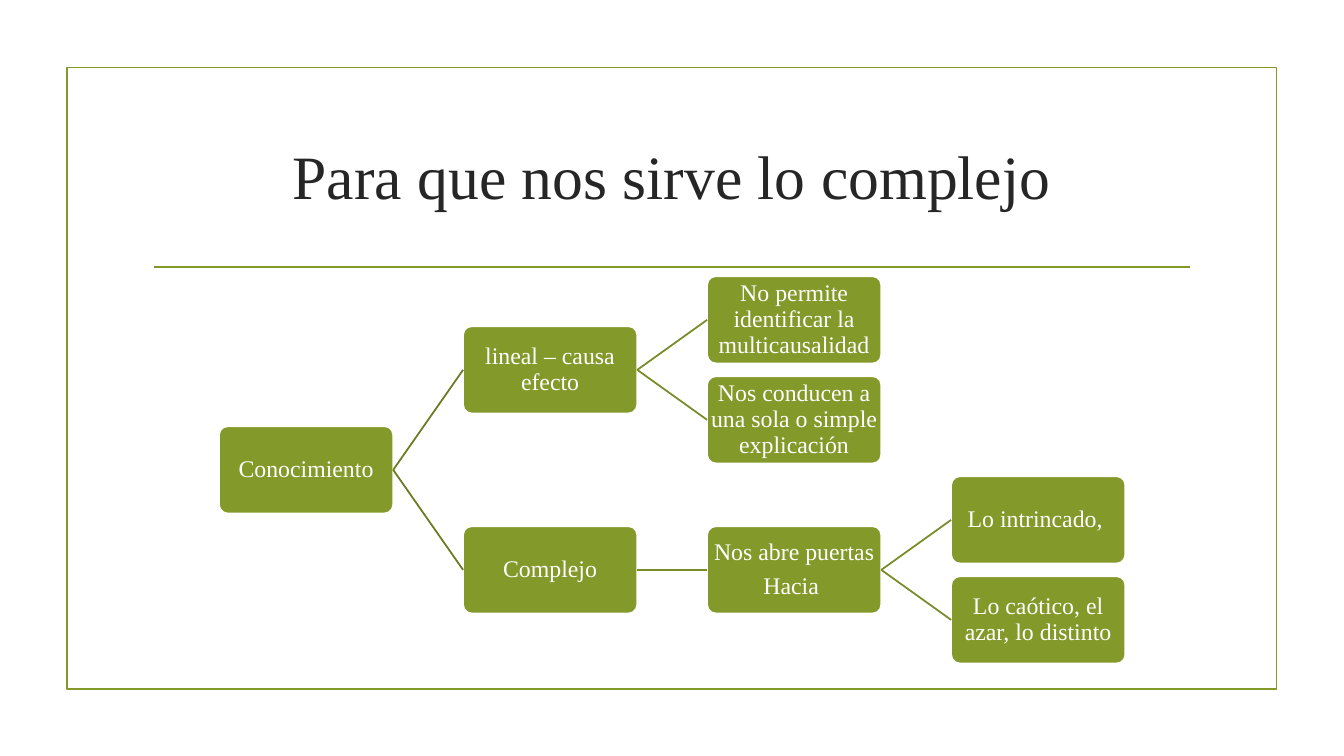
"""Build a slide with a tree diagram of linear and complex knowledge."""
from lxml.etree import SubElement
from pptx import Presentation
from pptx.dml.color import RGBColor
from pptx.enum.shapes import MSO_CONNECTOR, MSO_SHAPE
from pptx.enum.text import MSO_ANCHOR, PP_ALIGN
from pptx.oxml.ns import qn
from pptx.util import Cm, Pt

GREEN = RGBColor(0x83, 0x99, 0x2A)
ROOT_BRANCH = RGBColor(0x69, 0x7B, 0x22)
LOWER_BRANCH = RGBColor(0x77, 0x8B, 0x26)
WHITE = RGBColor(0xFF, 0xFF, 0xFF)
DARK = RGBColor(0x26, 0x26, 0x26)
FONT = "Times New Roman"
LINE_WIDTH = Pt(1.25)

LEFT, COLUMN_STEP = 5.52, 6.15
TOP, ROW_STEP = 6.96, 1.26
NODE_WIDTH, NODE_HEIGHT = 4.39, 2.2

NODES = [
    ("Conocimiento", 0, 3, None),
    ("lineal – causa efecto", 1, 1, 0),
    ("No permite identificar la multicausalidad", 2, 0, 1),
    ("Nos conducen a una sola o simple explicación", 2, 2, 1),
    ("Complejo", 1, 5, 0),
    ("Nos abre puertas\nHacia ", 2, 5, 4),
    ("Lo intrincado, ", 3, 4, 5),
    ("Lo caótico, el azar, lo distinto", 3, 6, 5),
]


def add_line(slide, start_x, start_y, end_x, end_y, color):
    connector = slide.shapes.add_connector(
        MSO_CONNECTOR.STRAIGHT, Cm(start_x), Cm(start_y), Cm(end_x), Cm(end_y))
    connector.line.color.rgb = color
    connector.line.width = LINE_WIDTH
    SubElement(connector._element.spPr, qn("a:effectLst"))
    return connector


def write_text(shape, text, size, color, inset):
    frame = shape.text_frame
    frame.word_wrap = True
    frame.vertical_anchor = MSO_ANCHOR.MIDDLE
    frame.margin_left = frame.margin_right = Cm(inset)
    frame.margin_top = frame.margin_bottom = Cm(inset)
    frame.text = text
    for paragraph in frame.paragraphs:
        paragraph.alignment = PP_ALIGN.CENTER
        paragraph.line_spacing = 0.9
        paragraph.font.name = FONT
        paragraph.font.size = Pt(size)
        paragraph.font.color.rgb = color


presentation = Presentation()
presentation.slide_width = Cm(33.87)
presentation.slide_height = Cm(19.05)
slide = presentation.slides.add_slide(presentation.slide_layouts[6])

border = slide.shapes.add_shape(
    MSO_SHAPE.RECTANGLE, Cm(1.69), Cm(1.7), Cm(30.48), Cm(15.67))
border.shadow.inherit = False
border.fill.background()
border.line.color.rgb = GREEN
border.line.width = LINE_WIDTH

add_line(slide, 3.89, 6.73, 30, 6.73, GREEN)

title = slide.shapes.add_textbox(Cm(3.6), Cm(2.72), Cm(26.67), Cm(3.63))
write_text(title, "Para que nos sirve lo complejo", 44, DARK, 0.13)

node_shapes = []
for text, column, row, parent in NODES:
    node = slide.shapes.add_shape(
        MSO_SHAPE.ROUNDED_RECTANGLE,
        Cm(LEFT + column * COLUMN_STEP), Cm(TOP + row * ROW_STEP),
        Cm(NODE_WIDTH), Cm(NODE_HEIGHT))
    node.adjustments[0] = 0.1
    node.shadow.inherit = False
    node.fill.solid()
    node.fill.fore_color.rgb = GREEN
    node.line.color.rgb = WHITE
    node.line.width = LINE_WIDTH
    write_text(node, text, 17, WHITE, 0.03)
    for paragraph in node.text_frame.paragraphs:
        paragraph.space_after = Pt(6.5)
    node_shapes.append(node)

    if parent is not None:
        branch = add_line(slide, 0, 0, 1, 1, ROOT_BRANCH if parent == 0 else LOWER_BRANCH)
        branch.begin_connect(node_shapes[parent], 3)
        branch.end_connect(node, 1)

presentation.save("out.pptx")
